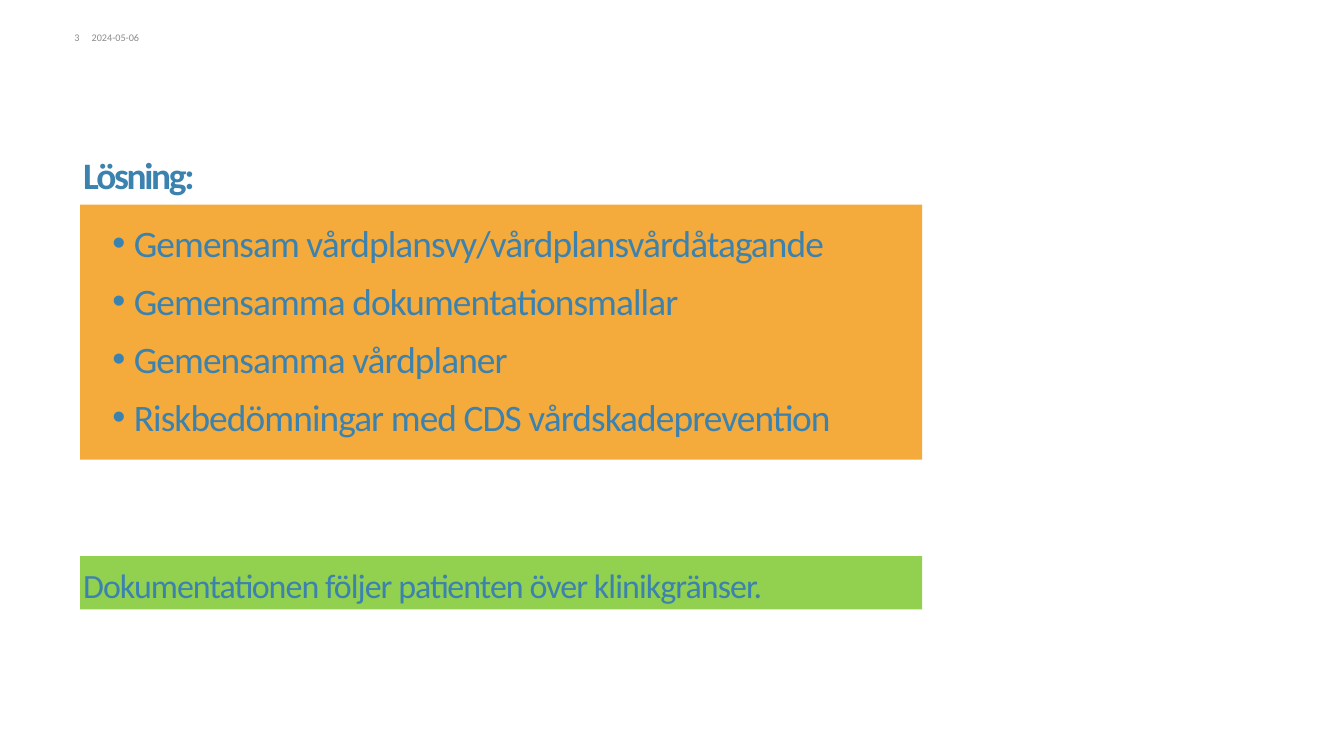
from lxml import etree
from pptx import Presentation
from pptx.dml.color import RGBColor
from pptx.enum.shapes import MSO_SHAPE
from pptx.enum.text import MSO_ANCHOR, PP_ALIGN
from pptx.oxml.ns import qn
from pptx.util import Inches, Pt

RECT = MSO_SHAPE.RECTANGLE
TOP, BOTTOM = MSO_ANCHOR.TOP, MSO_ANCHOR.BOTTOM
LEFT, RIGHT = PP_ALIGN.LEFT, PP_ALIGN.RIGHT

TITLE = "Lösning:"
POINTS = [
    "Gemensam vårdplansvy/vårdplansvårdåtagande",
    "Gemensamma dokumentationsmallar",
    "Gemensamma vårdplaner",
    "Riskbedömningar med CDS vårdskadeprevention",
]
CLOSING = "Dokumentationen följer patienten över klinikgränser."
PAGE, DATE = "3", "2024-05-06"

COLORS = {"blue": "3C82AF", "gray": "8C8C8C",
          "orange": "F5AA3C", "green": "92D050"}
FONT = "Calibri"
WIDTH, HEIGHT = 21.99, 12.37
TEXT_X, TEXT_W = 1.36, 19.27
BAND_X, BAND_W = 1.31, 13.78
META_Y, META_H = 0.52, 0.2
INDENT, HANG = 0.83, 0.35

prs = Presentation()
prs.slide_width, prs.slide_height = Inches(WIDTH), Inches(HEIGHT)
slide = prs.slides.add_slide(prs.slide_layouts[6])


def add_band(y, h, color):
    band = slide.shapes.add_shape(
        RECT, Inches(BAND_X), Inches(y), Inches(BAND_W), Inches(h))
    band.shadow.inherit = False
    band.fill.solid()
    band.fill.fore_color.rgb = RGBColor.from_string(COLORS[color])
    band.line.fill.background()


def add_bullet(par):
    props = par._p.get_or_add_pPr()
    props.set("marL", str(Inches(INDENT)))
    props.set("indent", str(-Inches(HANG)))
    font = etree.SubElement(props, qn("a:buFont"))
    font.set("typeface", "Arial")
    etree.SubElement(props, qn("a:buChar")).set("char", "•")


def add_text(lines, x, y, w, h, size=44, color="blue", bold=False, track=0,
             leading=None, after=0, align=LEFT, anchor=TOP, foot=0,
             bullet=False):
    """Add a text box with one paragraph per line; track is in points."""
    box = slide.shapes.add_textbox(Inches(x), Inches(y), Inches(w), Inches(h))
    frame = box.text_frame
    frame.word_wrap = True
    frame.vertical_anchor = anchor
    frame.margin_left = frame.margin_right = frame.margin_top = 0
    frame.margin_bottom = Inches(foot)
    for i, line in enumerate(lines):
        par = frame.add_paragraph() if i else frame.paragraphs[0]
        if bullet:
            add_bullet(par)
        par.alignment = align
        par.line_spacing = leading
        par.space_after = Pt(after)
        run = par.add_run()
        run.text = line
        font = run.font
        font.name, font.size, font.bold = FONT, Pt(size), bold
        font.color.rgb = RGBColor.from_string(COLORS[color])
        if track:
            run._r.get_or_add_rPr().set("spc", str(round(track * 100)))


add_text([TITLE], TEXT_X, 1.07, TEXT_W, 2.23, bold=True, track=-2.8,
         leading=0.85, anchor=BOTTOM, foot=0.08)
add_band(9.1, 0.87, "green")
add_band(3.35, 4.17, "orange")
add_text(POINTS, TEXT_X, 3.72, TEXT_W, 3.8, track=-1.1, leading=0.84,
         after=24, bullet=True)
add_text([CLOSING], TEXT_X, 9.34, TEXT_W, 0.63, size=40, track=-1.1,
         leading=0.84)
add_text([DATE], 1.5, META_Y, 0.87, META_H, size=12, color="gray")
add_text([PAGE], 0.91, META_Y, 0.39, META_H, size=12, color="gray",
         align=RIGHT)

prs.save("out.pptx")
